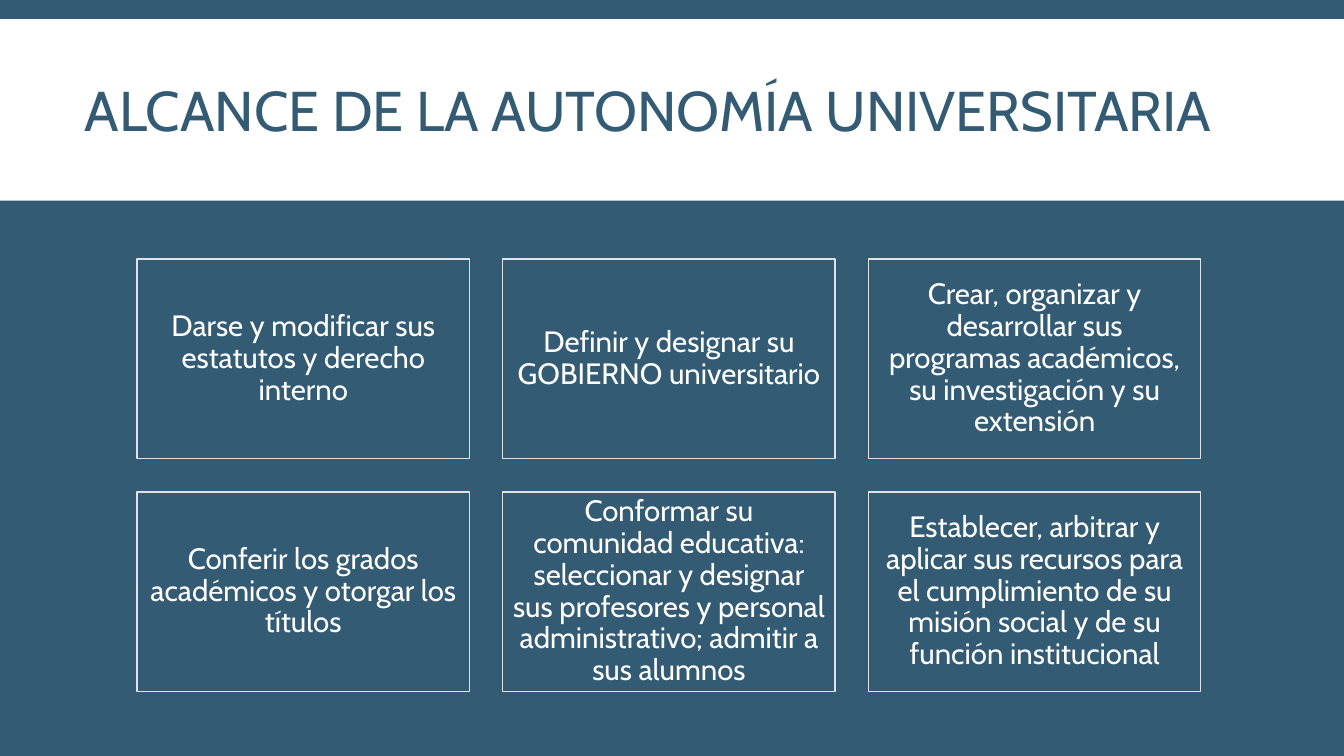
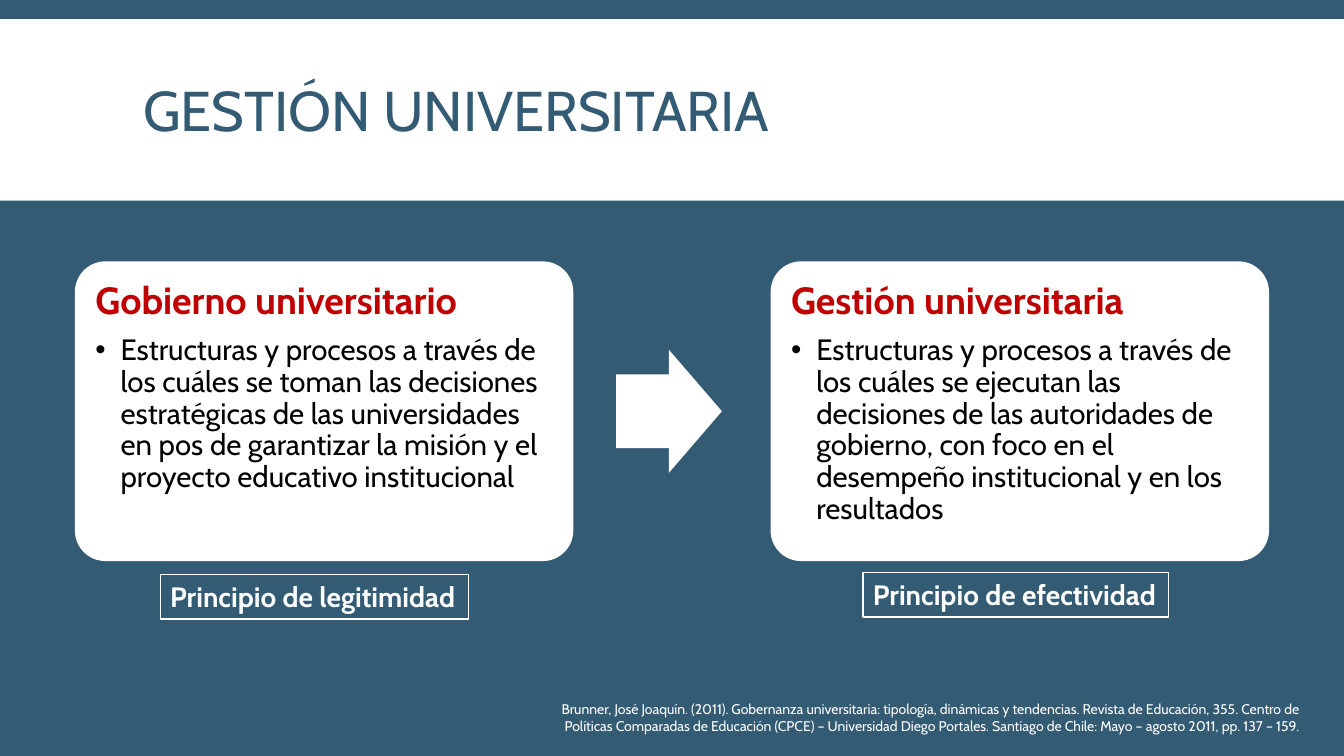
from dataclasses import dataclass

from lxml import etree
from pptx import Presentation
from pptx.dml.color import RGBColor
from pptx.enum.shapes import MSO_SHAPE
from pptx.enum.text import MSO_ANCHOR, MSO_AUTO_SIZE, PP_ALIGN
from pptx.oxml.ns import qn
from pptx.util import Inches, Pt

RECTANGLE = MSO_SHAPE.RECTANGLE
ROUNDED = MSO_SHAPE.ROUNDED_RECTANGLE
ARROW = MSO_SHAPE.RIGHT_ARROW
TOP, MIDDLE = MSO_ANCHOR.TOP, MSO_ANCHOR.MIDDLE
LEFT, CENTER, RIGHT = PP_ALIGN.LEFT, PP_ALIGN.CENTER, PP_ALIGN.RIGHT
NO_AUTOFIT = MSO_AUTO_SIZE.NONE
TITLE_ONLY = 5


@dataclass(frozen=True)
class Theme:
    """Colours, font and type sizes of the presentation."""
    blue: RGBColor = RGBColor(0x33, 0x5B, 0x74)
    white: RGBColor = RGBColor(0xFF, 0xFF, 0xFF)
    black: RGBColor = RGBColor(0, 0, 0)
    red: RGBColor = RGBColor(0xC0, 0, 0)
    border: RGBColor = RGBColor(0xDF, 0xE3, 0xE5)
    font: str = "Cabin"
    title: int = 40
    heading: int = 27
    body: int = 21
    label: int = 20
    source: int = 10


THEME = Theme()

POWERS = [
    "Darse y modificar sus estatutos y derecho interno",
    "Definir y designar su GOBIERNO universitario",
    "Crear, organizar y desarrollar sus programas académicos, su investigación y su extensión",
    "Conferir los grados académicos y otorgar los títulos",
    "Conformar su comunidad educativa: seleccionar y designar sus profesores y personal "
    "administrativo; admitir a sus alumnos",
    "Establecer, arbitrar y aplicar sus recursos para el cumplimiento de su misión social "
    "y de su función institucional",
]

CONCEPTS = [
    ("Gobierno universitario",
     "Estructuras y procesos a través de los cuáles se toman las decisiones estratégicas de las "
     "universidades en pos de garantizar la misión y el proyecto educativo institucional"),
    ("Gestión universitaria",
     "Estructuras y procesos a través de los cuáles se ejecutan las decisiones de las autoridades "
     "de gobierno, con foco en el desempeño institucional y en los resultados"),
]

PRINCIPLES = [
    ("Principio de legitimidad", (1.59, 5.7, 3.06, 0.44)),
    ("Principio de efectividad", (8.56, 5.68, 3.03, 0.44)),
]

SOURCE = (
    "Brunner, José Joaquín. (2011). Gobernanza universitaria: tipología, dinámicas y tendencias. "
    "Revista de Educación, 355. Centro de Políticas Comparadas de Educación (CPCE) – Universidad "
    "Diego Portales. Santiago de Chile: Mayo – agosto 2011, pp. 137 – 159."
)


def place(shape, box):
    """Move and size a shape to a box in inches."""
    shape.left, shape.top, shape.width, shape.height = map(Inches, box)


def add_box(slide, kind, box, fill=None, line=None):
    """Add a flat preset shape with optional fill and line."""
    shape = slide.shapes.add_shape(kind, *map(Inches, box))
    shape.shadow.inherit = False
    if fill is None:
        shape.fill.background()
    else:
        shape.fill.solid()
        shape.fill.fore_color.rgb = fill
    if line is None:
        shape.line.fill.background()
    else:
        shape.line.color.rgb = line
        shape.line.width = Pt(1)
    return shape


def set_frame(text_frame, anchor, inset=None, wrap=True):
    """Set anchor, wrapping and equal insets of a text frame."""
    text_frame.auto_size = NO_AUTOFIT
    text_frame.vertical_anchor = anchor
    text_frame.word_wrap = wrap
    if inset is not None:
        text_frame.margin_left = text_frame.margin_right = Inches(inset)
        text_frame.margin_top = text_frame.margin_bottom = Inches(inset)


def write(paragraph, text, size, color, align=LEFT, bold=False, spacing=1.0):
    """Fill a paragraph and format its runs."""
    paragraph.text = text
    paragraph.alignment = align
    paragraph.line_spacing = spacing
    for run in paragraph.runs:
        run.font.name = THEME.font
        run.font.size = Pt(size)
        run.font.bold = bold
        run.font.color.rgb = color


def add_bullet(paragraph, indent):
    """Give a paragraph a round bullet with a hanging indent."""
    properties = paragraph.element.get_or_add_pPr() if hasattr(paragraph, "element") \
        else paragraph._p.get_or_add_pPr()
    properties.set("marL", str(Inches(indent)))
    properties.set("indent", str(-Inches(indent)))
    etree.SubElement(properties, qn("a:buFont")).set("typeface", "Arial")
    etree.SubElement(properties, qn("a:buChar")).set("char", "•")


def style_template(presentation):
    """Set the shared background and put the title band on the layout."""
    background = presentation.slide_master.background.fill
    background.solid()
    background.fore_color.rgb = THEME.blue


def add_band(slide):
    """Add the white title band to the layout of a slide."""
    band = add_box(slide, RECTANGLE, (0, 0.19, 13.33, 1.8), THEME.white)
    slide.slide_layout.shapes.element.insert(2, band.element)


def add_titled_slide(presentation, title, box):
    """Add a slide with its title placed in a box."""
    slide = presentation.slides.add_slide(presentation.slide_layouts[TITLE_ONLY])
    place(slide.shapes.title, box)
    text_frame = slide.shapes.title.text_frame
    set_frame(text_frame, MIDDLE)
    write(text_frame.paragraphs[0], title, THEME.title, THEME.blue, spacing=0.85)
    return slide


def add_power_grid(slide, box, texts, columns=3, gap=0.33):
    """Spread outlined boxes over a grid."""
    left, top, width, height = box
    rows = len(texts) // columns
    cell_width = (width - gap * (columns - 1)) / columns
    cell_height = (height - gap * (rows - 1)) / rows
    for index, text in enumerate(texts):
        row, column = divmod(index, columns)
        cell = (left + column * (cell_width + gap), top + row * (cell_height + gap),
                cell_width, cell_height)
        shape = add_box(slide, RECTANGLE, cell, THEME.blue, THEME.border)
        set_frame(shape.text_frame, MIDDLE, 0.09)
        write(shape.text_frame.paragraphs[0], text, THEME.body, THEME.white, CENTER, spacing=0.9)


def add_concept_card(slide, box, heading, description):
    """Add a rounded card with a heading and one bullet."""
    card = add_box(slide, ROUNDED, box, THEME.white, THEME.white)
    card.adjustments[0] = 0.1
    text_frame = card.text_frame
    set_frame(text_frame, TOP, 0.11)
    title = text_frame.paragraphs[0]
    write(title, heading, THEME.heading, THEME.red, bold=True, spacing=0.9)
    title.space_after = Pt(9)
    bullet = text_frame.add_paragraph()
    write(bullet, description, THEME.body, THEME.black, spacing=0.9)
    bullet.level = 1
    add_bullet(bullet, 0.25)


def add_concept_flow(slide, box, concepts, card_width=4.93):
    """Set two cards at the ends of a box with an arrow between them."""
    left, top, width, height = box
    for card_left, concept in zip((left, left + width - card_width), concepts):
        add_concept_card(slide, (card_left, top, card_width, height), *concept)
    arrow_width, arrow_height = 1.05, 1.22
    arrow = add_box(slide, ARROW, (left + card_width + 0.43, top + (height - arrow_height) / 2,
                                   arrow_width, arrow_height), THEME.white)
    arrow.adjustments[0] = 0.6
    arrow.adjustments[1] = 0.5


def add_principle(slide, box, text):
    """Add an outlined label."""
    label = add_box(slide, RECTANGLE, box, line=THEME.white)
    set_frame(label.text_frame, TOP, wrap=False)
    write(label.text_frame.paragraphs[0], text, THEME.label, THEME.white, bold=True)


def add_source(slide, box, text):
    """Add the right-aligned bibliographic note."""
    note = slide.shapes.add_textbox(*map(Inches, box))
    set_frame(note.text_frame, TOP)
    write(note.text_frame.paragraphs[0], text, THEME.source, THEME.white, RIGHT)


def build_scope_slide(presentation):
    """Build the slide on the scope of autonomy."""
    slide = add_titled_slide(presentation, "ALCANCE DE LA AUTONOMÍA UNIVERSITARIA",
                             (0.74, 0.31, 11.78, 1.65))
    add_power_grid(slide, (1.36, 2.57, 10.55, 4.29), POWERS)
    return slide


def build_management_slide(presentation):
    """Build the slide on government and management."""
    slide = add_titled_slide(presentation, "GESTIÓN UNIVERSITARIA", (1.32, 0.31, 10.7, 1.65))
    add_concept_flow(slide, (0.75, 2.6, 11.83, 2.96), CONCEPTS)
    for text, box in PRINCIPLES:
        add_principle(slide, box, text)
    add_source(slide, (5.14, 6.9, 7.84, 0.44), SOURCE)


def main():
    """Build and save the presentation."""
    presentation = Presentation()
    presentation.slide_width = Inches(13.33)
    presentation.slide_height = Inches(7.5)
    style_template(presentation)
    add_band(build_scope_slide(presentation))
    build_management_slide(presentation)
    presentation.save("out.pptx")


if __name__ == "__main__":
    main()
